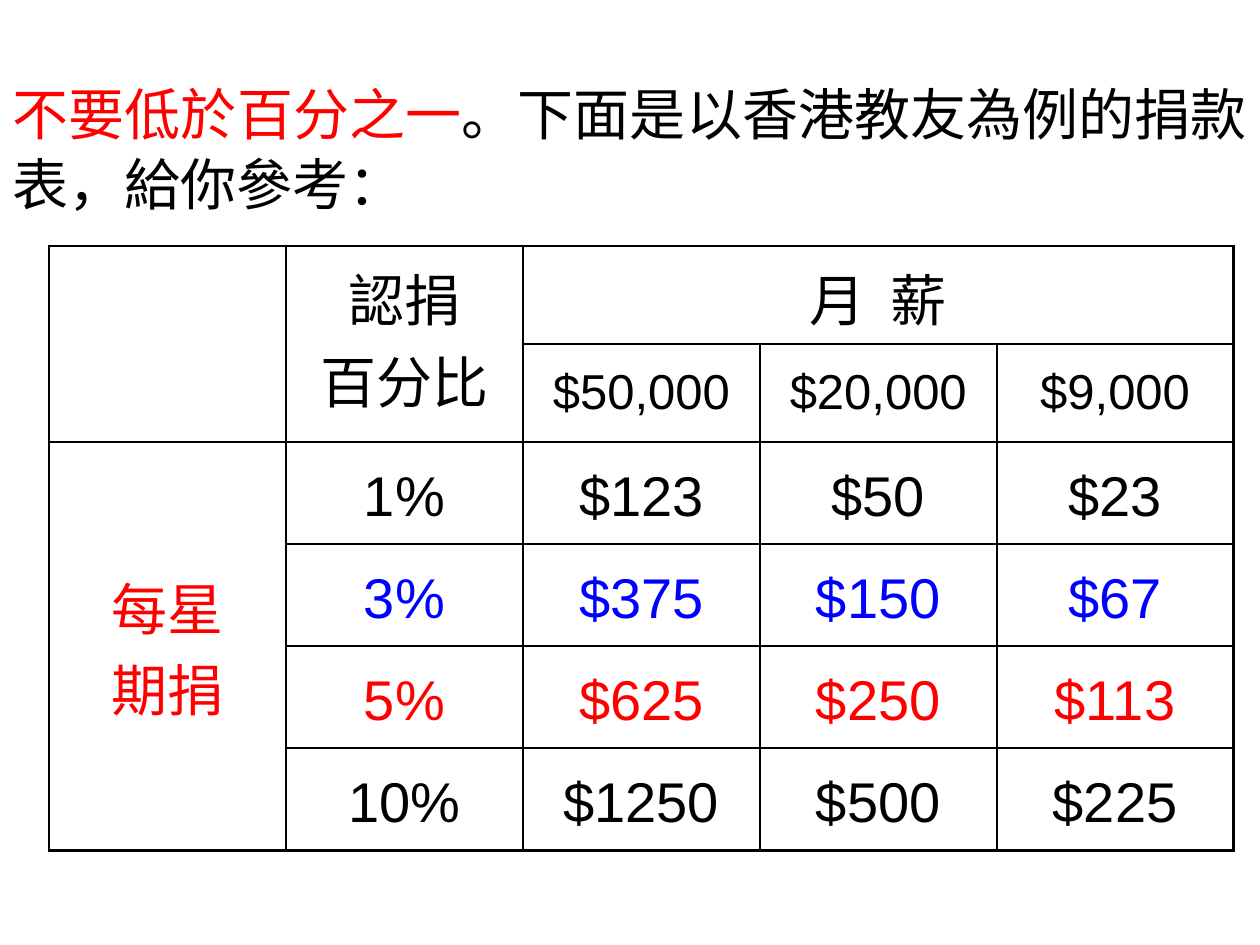
from dataclasses import dataclass

import pptx
import pptx.dml.color
import pptx.enum.text
import pptx.oxml
import pptx.oxml.ns
import pptx.util
from pptx.util import Inches

COLOURS = {"black": "000000", "red": "FF0000", "blue": "0000FF"}
CHINESE, LATIN = "Noto Sans CJK SC", "Arial"
ALIGN = pptx.enum.text.PP_ALIGN
ANCHOR = pptx.enum.text.MSO_ANCHOR
COLUMN_WIDTH = 1.88
ROW_HEIGHTS = [0.78] * 2 + [0.81] * 4


@dataclass
class CellStyle:
    font: str
    size: int
    leading: int | None
    colour: str = "black"
    anchor: pptx.enum.text.MSO_ANCHOR = ANCHOR.MIDDLE
    margins: tuple[float, float] = (0.1, 0.05)


@dataclass
class Pledge:
    amounts: tuple[str, ...]
    colour: str = "black"


PLEDGES = [
    Pledge(("1%", "$123", "$50", "$23")),
    Pledge(("3%", "$375", "$150", "$67"), "blue"),
    Pledge(("5%", "$625", "$250", "$113"), "red"),
    Pledge(("10%", "$1250", "$500", "$225")),
]
SALARIES = ("$50,000", "$20,000", "$9,000")


def format_run(run, font: str, size: int, colour: str) -> None:
    run.font.name = font
    run.font.size = pptx.util.Pt(size)
    run.font.color.rgb = pptx.dml.color.RGBColor.from_string(COLOURS[colour])
    east_asian = pptx.oxml.parse_xml(
        f'<a:ea {pptx.oxml.ns.nsdecls("a")} typeface="{font}"/>')
    run.font._element.append(east_asian)


def fill_cell(cell, text: str, style: CellStyle) -> None:
    cell.text_frame.text = text
    cell.vertical_anchor = style.anchor
    cell.margin_left = cell.margin_right = Inches(style.margins[0])
    cell.margin_top = cell.margin_bottom = Inches(style.margins[1])
    for paragraph in cell.text_frame.paragraphs:
        paragraph.alignment = ALIGN.CENTER
        if style.leading:
            paragraph.line_spacing = pptx.util.Pt(style.leading)
        for run in paragraph.runs:
            format_run(run, style.font, style.size, style.colour)


def border_cell(cell, open_sides: set[str]) -> None:
    """Rule every side of the cell except the open ones."""
    properties = cell._tc.get_or_add_tcPr()
    for index, side in enumerate("LRTB"):
        paint = ("<a:noFill/>" if side in open_sides else
                 f'<a:solidFill><a:srgbClr val="{COLOURS["black"]}"/></a:solidFill>')
        properties.insert(index, pptx.oxml.parse_xml(
            f'<a:ln{side} {pptx.oxml.ns.nsdecls("a")} w="{pptx.util.Pt(1.5)}">'
            f"{paint}</a:ln{side}>"))


def open_sides(row: int, column: int) -> set[str]:
    """Sides left unruled so that the header cells read as joined blocks."""
    if column < 2:
        return {0: {"B"}, 1: {"T"}}.get(row, set())
    if row == 0:
        return {2: {"R"}, 3: {"L", "R"}, 4: {"L"}}[column]
    return set()


def add_introduction(slide) -> None:
    introduction = slide.placeholders[1]
    introduction.left = introduction.top = 0
    introduction.width, introduction.height = Inches(10), Inches(7.5)
    frame = introduction.text_frame
    frame.word_wrap = True
    frame.auto_size = pptx.enum.text.MSO_AUTO_SIZE.NONE
    frame.vertical_anchor = ANCHOR.TOP
    frame.margin_top = Inches(0.61)
    paragraph = frame.paragraphs[0]
    paragraph.alignment = ALIGN.JUSTIFY
    paragraph.line_spacing = pptx.util.Pt(40)
    paragraph.space_before = pptx.util.Pt(0)
    for text, colour in (("不要低於百分之一", "red"),
                         ("。下面是以香港教友為例的捐款表，給你參考：", "black")):
        run = paragraph.add_run()
        run.text = text
        format_run(run, CHINESE, 32, colour)


def add_pledge_table(slide) -> None:
    table = slide.shapes.add_table(
        len(ROW_HEIGHTS), 5, Inches(0.39), Inches(1.95),
        Inches(5 * COLUMN_WIDTH), Inches(sum(ROW_HEIGHTS))).table
    table.first_row = table.horz_banding = False
    for column in table.columns:
        column.width = Inches(COLUMN_WIDTH)
    for row, height in zip(table.rows, ROW_HEIGHTS):
        row.height = Inches(height)

    for row in range(len(ROW_HEIGHTS)):
        for column in range(5):
            cell = table.cell(row, column)
            cell.fill.background()
            border_cell(cell, open_sides(row, column))
    table.cell(2, 0).merge(table.cell(5, 0))

    top_header = CellStyle(CHINESE, 32, 30, anchor=ANCHOR.BOTTOM)
    fill_cell(table.cell(0, 1), "認捐", top_header)
    fill_cell(table.cell(0, 3), "月  薪", top_header)
    fill_cell(table.cell(1, 1), "百分比", CellStyle(CHINESE, 32, 30))
    fill_cell(table.cell(2, 0), "每星\n期捐", CellStyle(CHINESE, 32, None, "red"))
    for column, salary in enumerate(SALARIES, start=2):
        fill_cell(table.cell(1, column), salary,
                  CellStyle(LATIN, 28, 30, margins=(0.02, 0)))
    for row, pledge in enumerate(PLEDGES, start=2):
        style = CellStyle(LATIN, 32, 40, pledge.colour, margins=(0.02, 0))
        for column, amount in enumerate(pledge.amounts, start=1):
            fill_cell(table.cell(row, column), amount, style)


def main() -> None:
    presentation = pptx.Presentation()
    presentation.slide_width, presentation.slide_height = Inches(10), Inches(7.5)
    slide = presentation.slides.add_slide(presentation.slide_layouts[0])
    unused_title = slide.shapes.title.element
    unused_title.getparent().remove(unused_title)
    add_introduction(slide)
    add_pledge_table(slide)
    presentation.save("out.pptx")


if __name__ == "__main__":
    main()
